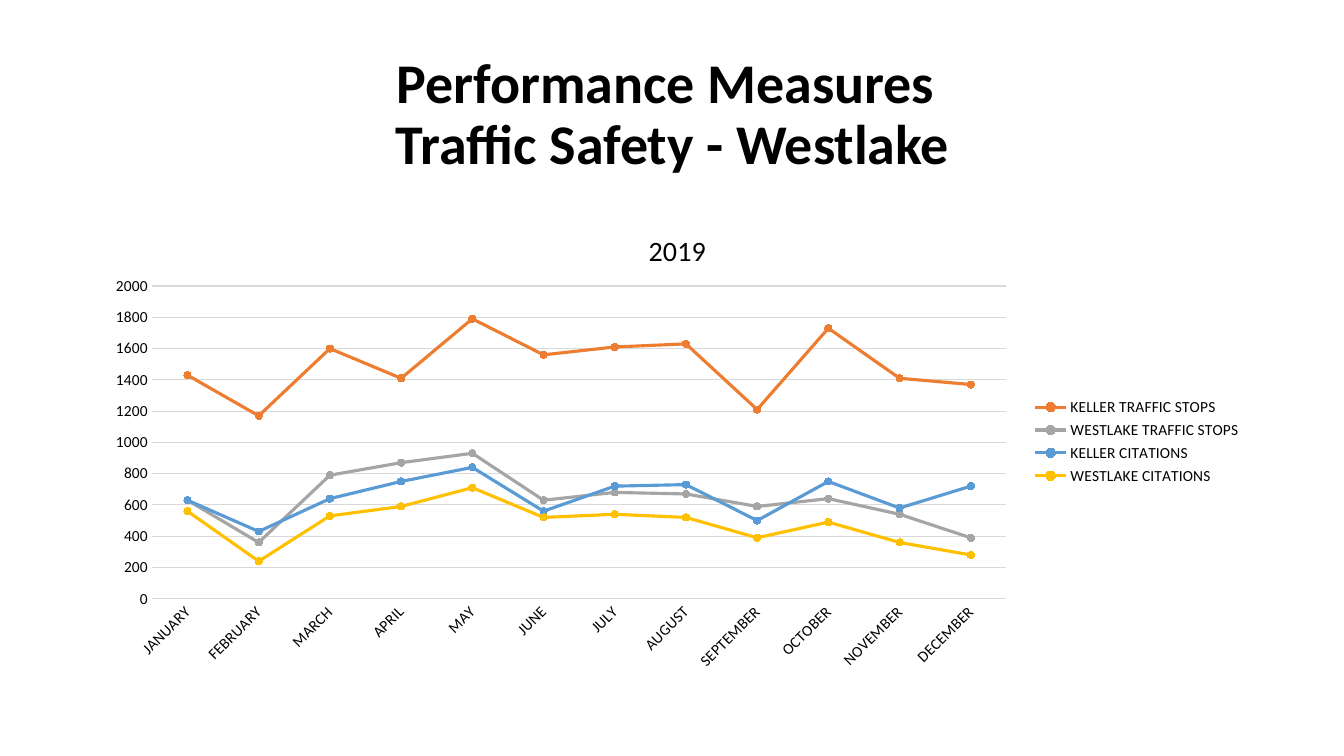
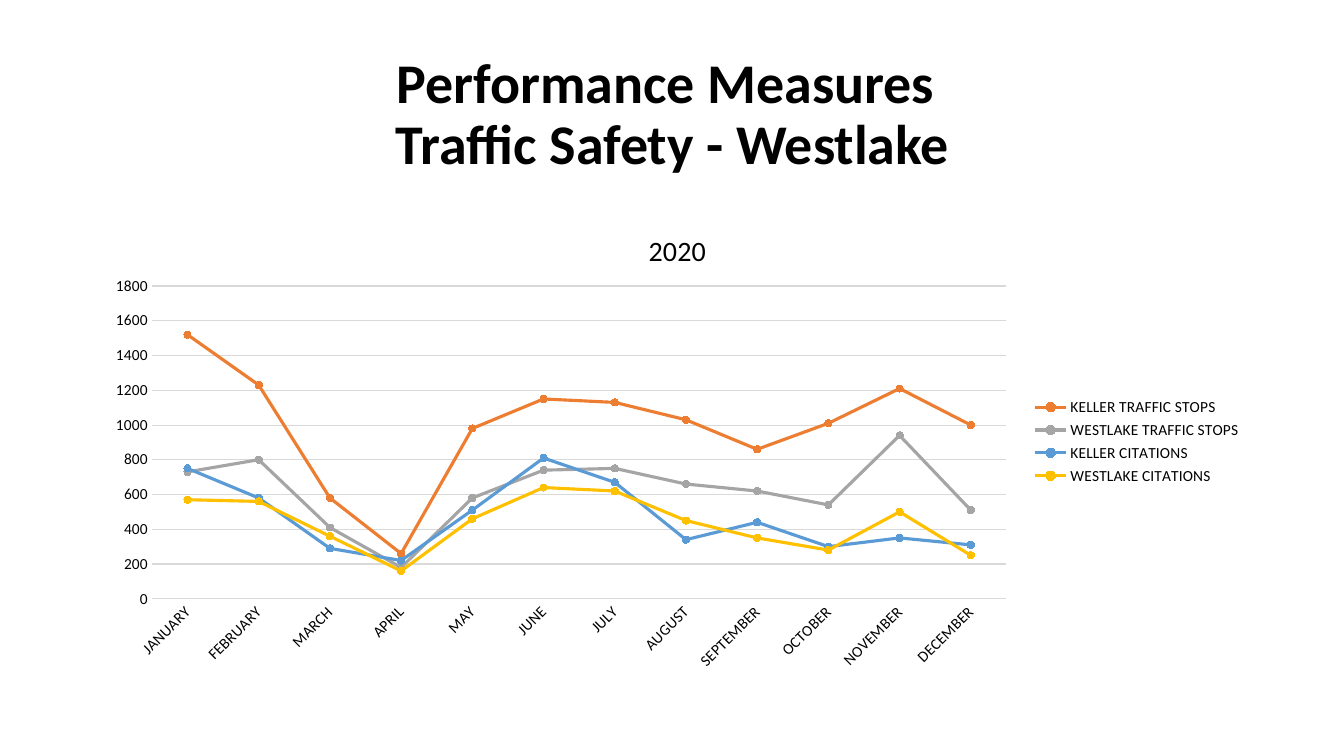
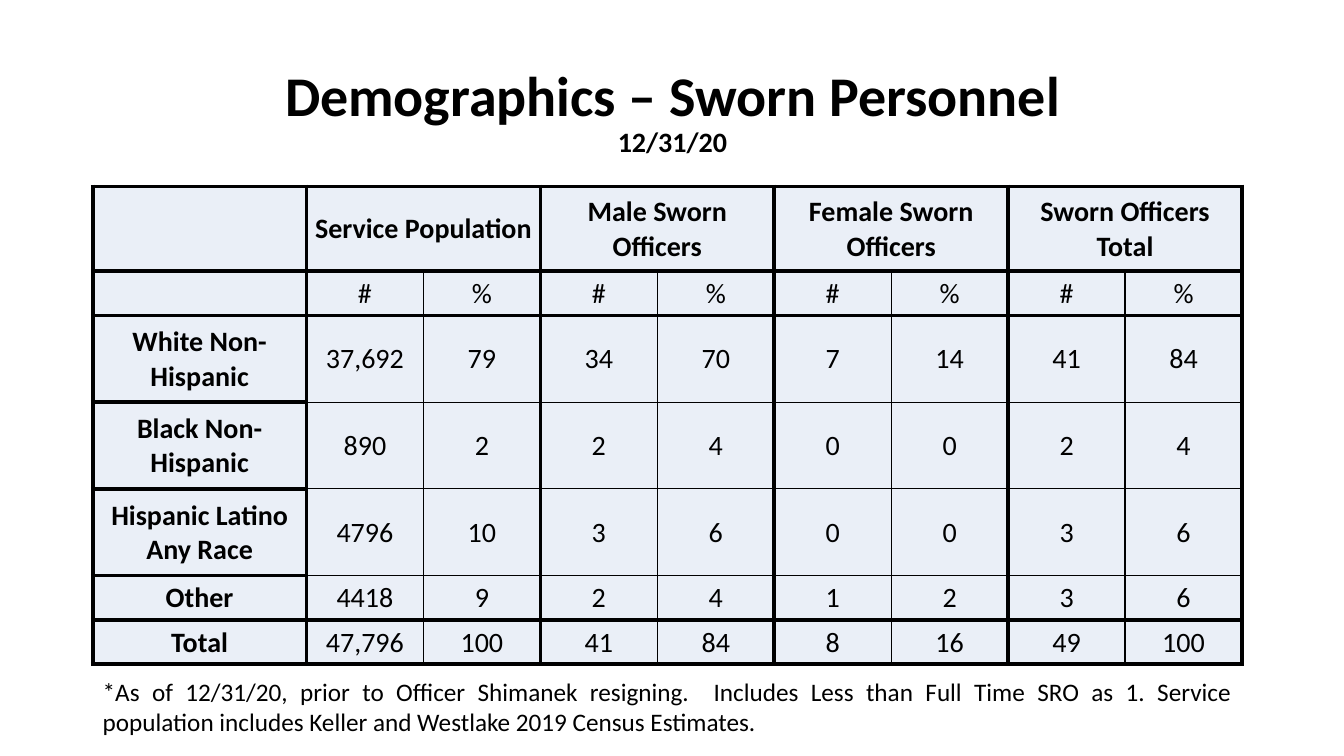
from lxml import etree
from pptx import Presentation
from pptx.chart.data import CategoryChartData
from pptx.dml.color import RGBColor
from pptx.enum import chart as ch, text as tx
from pptx.oxml import ns
from pptx.util import Inches, Pt

FONT = "Calibri"
BLACK = RGBColor(0x00, 0x00, 0x00)
GRID = RGBColor(0xD9, 0xD9, 0xD9)
CELL_FILL = RGBColor(0xEA, 0xEF, 0xF7)
ORANGE = RGBColor(0xED, 0x7D, 0x31)
GRAY = RGBColor(0xA5, 0xA5, 0xA5)
BLUE = RGBColor(0x5B, 0x9B, 0xD5)
GOLD = RGBColor(0xFF, 0xC0, 0x00)

LEFT, WIDTH = 0.92, 11.5
TABLE_WIDTH = 11.4
TITLE_ONLY = 5
THICK, THIN = 3, 1

MONTHS = ["JANUARY", "FEBRUARY", "MARCH", "APRIL", "MAY", "JUNE", "JULY",
          "AUGUST", "SEPTEMBER", "OCTOBER", "NOVEMBER", "DECEMBER"]
SERIES = [("KELLER TRAFFIC STOPS", ORANGE), ("WESTLAKE TRAFFIC STOPS", GRAY),
          ("KELLER CITATIONS", BLUE), ("WESTLAKE CITATIONS", GOLD)]
# Year, top of the value axis, one list of monthly counts per series
YEARS = [
    ("2019", 2000, [
        [1430, 1170, 1600, 1410, 1790, 1560, 1610, 1630, 1210, 1730, 1410, 1370],
        [630, 360, 790, 870, 930, 630, 680, 670, 590, 640, 540, 390],
        [630, 430, 640, 750, 840, 560, 720, 730, 500, 750, 580, 720],
        [560, 240, 530, 590, 710, 520, 540, 520, 390, 490, 360, 280]]),
    ("2020", 1800, [
        [1520, 1230, 580, 260, 980, 1150, 1130, 1030, 860, 1010, 1210, 1000],
        [730, 800, 410, 180, 580, 740, 750, 660, 620, 540, 940, 510],
        [750, 580, 290, 220, 510, 810, 670, 340, 440, 300, 350, 310],
        [570, 560, 360, 160, 460, 640, 620, 450, 350, 280, 500, 250]]),
]

GROUPS = ["Service Population", "Male Sworn Officers",
          "Female Sworn Officers", "Sworn Officers Total"]
TABLE_ROWS = [
    ["", "#", "%", "#", "%", "#", "%", "#", "%"],
    ["White Non-Hispanic", "37,692", "79", "34", "70", "7", "14", "41", "84"],
    ["Black Non-Hispanic", "890", "2", "2", "4", "0", "0", "2", "4"],
    ["Hispanic Latino Any Race", "4796", "10", "3", "6", "0", "0", "3", "6"],
    ["Other", "4418", "9", "2", "4", "1", "2", "3", "6"],
    ["Total", "47,796", "100", "41", "84", "8", "16", "49", "100"],
]
COLUMN_WIDTHS = [2.12] + [1.16] * 8
ROW_HEIGHTS = [0.84, 0.44, 0.86, 0.86, 0.86, 0.44, 0.44]
FOOTNOTE = ("*As of 12/31/20, prior to Officer Shimanek resigning.  Includes Less "
            "than Full Time SRO as 1. Service population includes Keller and "
            "Westlake 2019 Census Estimates.")


def style_font(font, size, bold=False):
    font.name = FONT
    font.size = Pt(size)
    font.bold = bold
    font.color.rgb = BLACK


def add_span(para, text, size, bold=False):
    span = para.add_run()
    span.text = text
    style_font(span.font, size, bold)


def add_page(deck, first_line, second_line):
    """Add a page whose title has two lines, each a list of (text, size, bold)."""
    page = deck.slides.add_slide(deck.slide_layouts[TITLE_ONLY])
    title = page.shapes.title
    title.left, title.top = Inches(LEFT), Inches(0.4)
    title.width, title.height = Inches(WIDTH), Inches(1.45)
    frame = title.text_frame
    frame.auto_size = tx.MSO_AUTO_SIZE.NONE
    frame.vertical_anchor = tx.MSO_ANCHOR.MIDDLE
    para = frame.paragraphs[0]
    para.alignment = tx.PP_ALIGN.CENTER
    para.line_spacing = 0.9
    for span in first_line:
        add_span(para, *span)
    para.add_line_break()
    for span in second_line:
        add_span(para, *span)
    return page


def place_chart_part(part, **fractions):
    """Fix a chart title or plot area at fractions of the chart's size."""
    for old in part.findall(ns.qn("c:layout")):
        part.remove(old)
    layout = etree.Element(ns.qn("c:layout"))
    manual = etree.SubElement(layout, ns.qn("c:manualLayout"))
    settings = {"xMode": "edge", "yMode": "edge", **fractions}
    if "w" in fractions:
        settings = {"layoutTarget": "inner", **settings}
    for name, value in settings.items():
        etree.SubElement(manual, ns.qn("c:" + name)).set("val", str(value))
    text = part.find(ns.qn("c:tx"))
    if text is None:
        part.insert(0, layout)
    else:
        text.addnext(layout)


def style_axes(chart, maximum):
    for axis in (chart.category_axis, chart.value_axis):
        axis.major_tick_mark = axis.minor_tick_mark = ch.XL_TICK_MARK.NONE
        style_font(axis.tick_labels.font, 11)
    months, counts = chart.category_axis, chart.value_axis
    slant = months._element.find(ns.qn("c:txPr")).find(ns.qn("a:bodyPr"))
    slant.set("rot", "-2700000")
    slant.set("vert", "horz")
    counts.minimum_scale, counts.maximum_scale = 0, maximum
    counts.major_unit = 200
    counts.format.line.fill.background()
    for line in (months.format.line, counts.major_gridlines.format.line):
        line.color.rgb = GRID
        line.width = Pt(0.75)


def style_series(series, color):
    series.smooth = False
    series.format.line.color.rgb = color
    series.format.line.width = Pt(2.25)
    marker = series.marker
    marker.style = ch.XL_MARKER_STYLE.CIRCLE
    marker.size = 5
    marker.format.fill.solid()
    marker.format.fill.fore_color.rgb = color
    marker.format.line.color.rgb = color


def add_year_chart(page, year, maximum, counts):
    data = CategoryChartData()
    data.categories = MONTHS
    for (name, _), values in zip(SERIES, counts):
        data.add_series(name, values)
    chart = page.shapes.add_chart(
        ch.XL_CHART_TYPE.LINE_MARKERS, Inches(LEFT), Inches(2),
        Inches(WIDTH), Inches(4.76), data).chart
    style_font(chart.font, 10)
    add_span(chart.chart_title.text_frame.paragraphs[0], year, 20)
    chart.chart_title.include_in_layout = False
    place_chart_part(chart.chart_title._element, x=0.475, y=0.05)
    chart.has_legend = True
    chart.legend.position = ch.XL_LEGEND_POSITION.RIGHT
    chart.legend.include_in_layout = False
    style_font(chart.legend.font, 11)
    style_axes(chart, maximum)
    plot = chart.plots[0]
    plot.vary_by_categories = False
    for series, (_, color) in zip(plot.series, SERIES):
        style_series(series, color)
    place_chart_part(chart._chartSpace.chart.plotArea,
                     x=0.051, y=0.176, w=0.737, h=0.652)


def border_widths(row, col):
    """Thin lines part # from % and the population rows; the rest is thick."""
    figures = col > 0
    number = figures and row > 0 and col % 2 == 1
    percent = figures and row > 0 and col % 2 == 0
    thin_sides = {"L": percent, "R": number,
                  "T": figures and 3 <= row <= 5,
                  "B": figures and 2 <= row <= 4}
    return {side: THIN if thin else THICK for side, thin in thin_sides.items()}


def style_cell(cell, row, col):
    properties = cell._tc.get_or_add_tcPr()
    for side, width in border_widths(row, col).items():
        line = etree.SubElement(properties, ns.qn("a:ln" + side), w=str(Pt(width)))
        fill = etree.SubElement(line, ns.qn("a:solidFill"))
        etree.SubElement(fill, ns.qn("a:srgbClr"), val=str(BLACK))
    cell.fill.solid()
    cell.fill.fore_color.rgb = CELL_FILL
    cell.vertical_anchor = tx.MSO_ANCHOR.MIDDLE
    cell.margin_left = cell.margin_top = cell.margin_right = Inches(0.01)
    cell.margin_bottom = 0


def add_personnel_table(page):
    header = [""]
    for group in GROUPS:
        header += [group, ""]
    rows = [header] + TABLE_ROWS
    table = page.shapes.add_table(
        len(rows), len(header), Inches(LEFT), Inches(1.85),
        Inches(TABLE_WIDTH), Inches(sum(ROW_HEIGHTS))).table
    table.first_row = table.horz_banding = False
    for column, width in zip(table.columns, COLUMN_WIDTHS):
        column.width = Inches(width)
    for table_row, height in zip(table.rows, ROW_HEIGHTS):
        table_row.height = Inches(height)
    for row, texts in enumerate(rows):
        for col, text in enumerate(texts):
            cell = table.cell(row, col)
            style_cell(cell, row, col)
            para = cell.text_frame.paragraphs[0]
            para.alignment = tx.PP_ALIGN.CENTER
            if text:
                add_span(para, text, 20, bold=row == 0 or col == 0)
    for col in range(1, len(header), 2):
        table.cell(0, col).merge(table.cell(0, col + 1))


def add_footnote(page):
    box = page.shapes.add_textbox(Inches(LEFT), Inches(6.66),
                                  Inches(TABLE_WIDTH), Inches(0.71))
    box.text_frame.word_wrap = True
    para = box.text_frame.paragraphs[0]
    para.alignment = tx.PP_ALIGN.JUSTIFY
    add_span(para, FOOTNOTE, 18)


def main():
    deck = Presentation()
    deck.slide_width, deck.slide_height = Inches(13.33), Inches(7.5)
    for year, maximum, counts in YEARS:
        page = add_page(deck,
                        [("Performance Measures", 40, True), (" ", 44, False)],
                        [("Traffic Safety - Westlake", 40, True)])
        add_year_chart(page, year, maximum, counts)
    page = add_page(deck, [("Demographics – Sworn Personnel", 40, True)],
                    [("12/31/20", 20, True)])
    add_personnel_table(page)
    add_footnote(page)
    deck.save("out.pptx")


if __name__ == "__main__":
    main()
